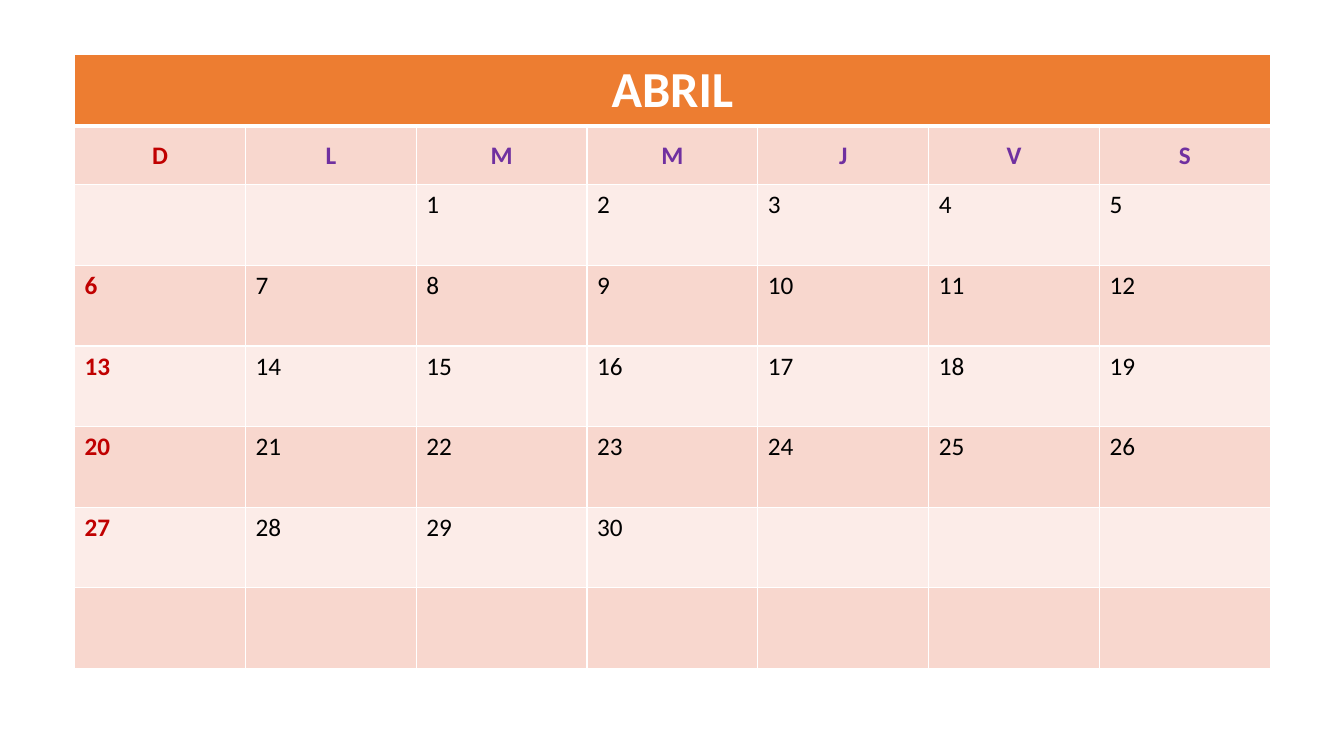
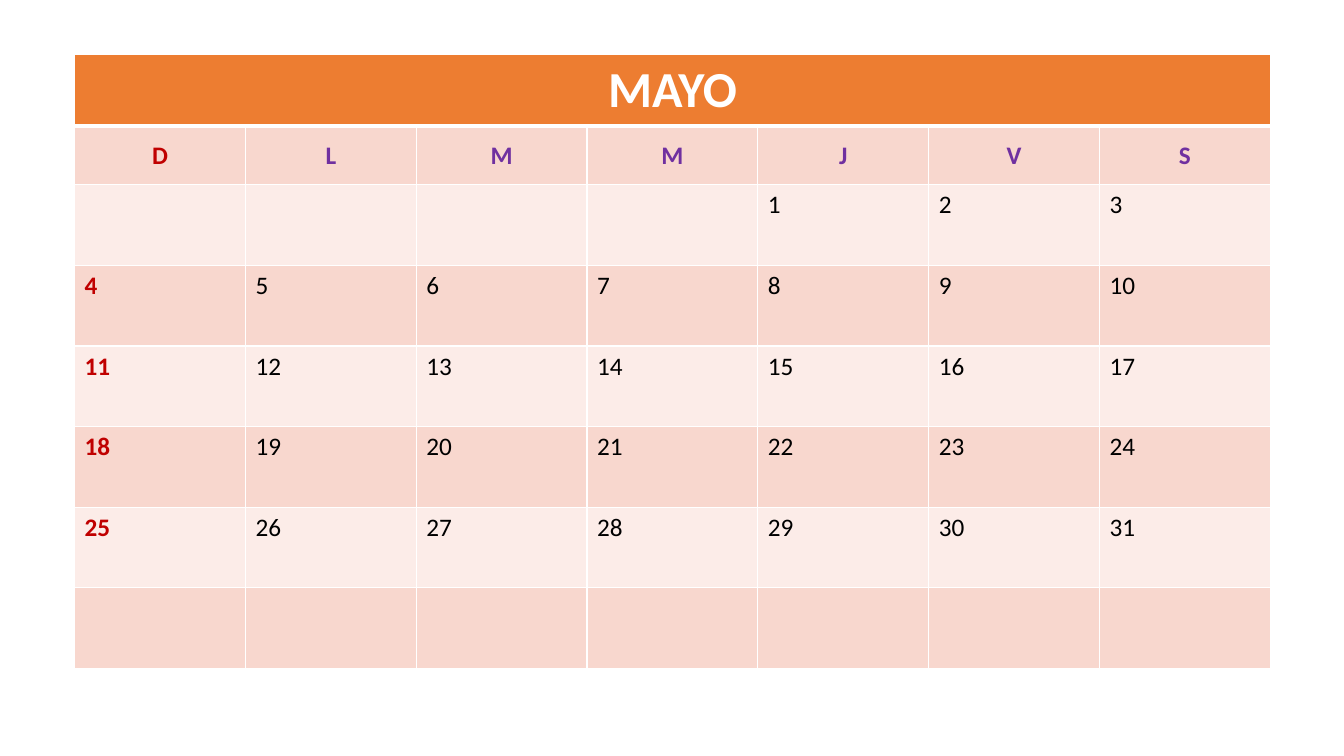
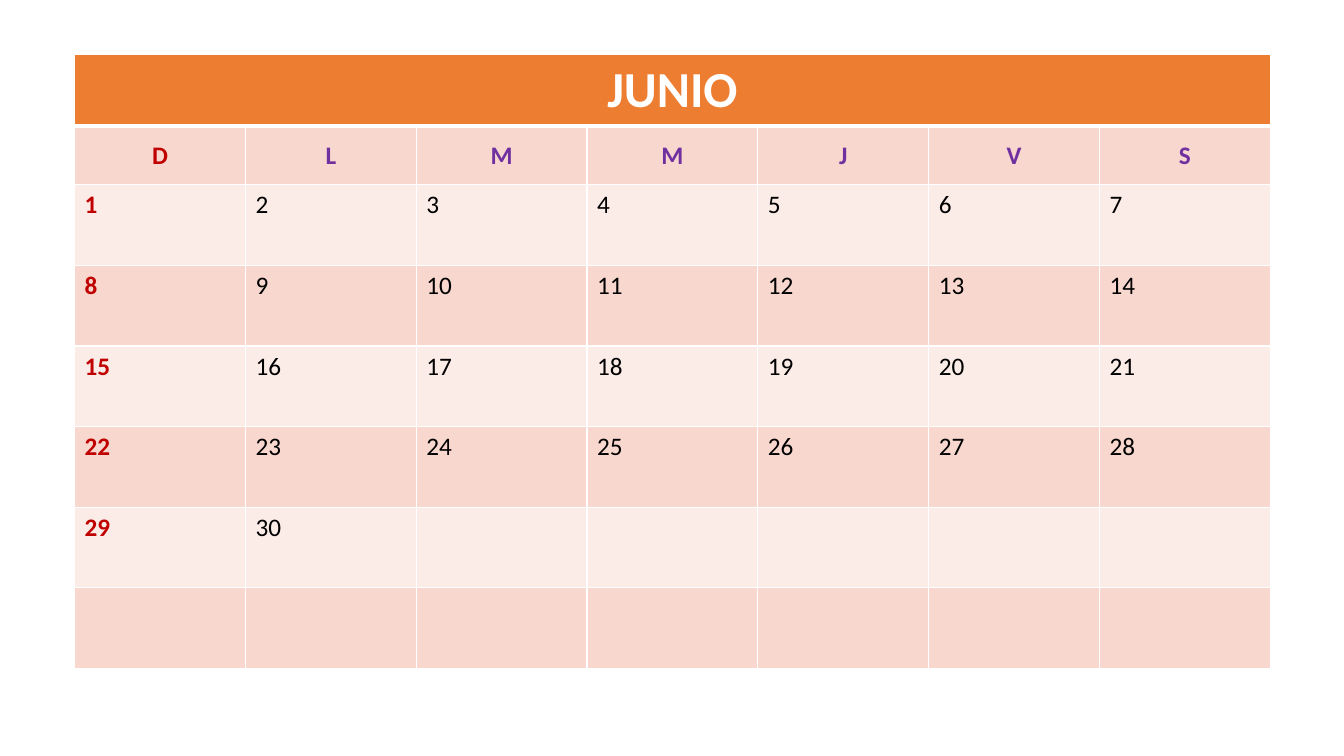
from lxml import etree
from pptx import Presentation
from pptx.dml.color import RGBColor
from pptx.enum.text import MSO_ANCHOR, PP_ALIGN
from pptx.oxml.ns import qn
from pptx.util import Inches, Pt

CENTER, LEFT = PP_ALIGN.CENTER, PP_ALIGN.LEFT
MIDDLE, TOP = MSO_ANCHOR.MIDDLE, MSO_ANCHOR.TOP

WHITE = RGBColor(0xFF, 0xFF, 0xFF)
BLACK = RGBColor(0x00, 0x00, 0x00)
ORANGE = RGBColor(0xED, 0x7D, 0x31)
PEACH = RGBColor(0xF8, 0xD7, 0xCE)
PALE_PEACH = RGBColor(0xFC, 0xEC, 0xE8)
SUNDAY_RED = RGBColor(0xC0, 0x00, 0x00)
WEEKDAY_PURPLE = RGBColor(0x70, 0x30, 0xA0)

FONT = "Calibri"
SLIDE_W, SLIDE_H = 13.33, 7.5
CALENDAR_LEFT, CALENDAR_TOP, CALENDAR_W = 0.74, 0.54, 11.86
WEEKS = 6
ROW_HEIGHTS = [0.69, 0.58] + [0.8] * WEEKS
WEEKDAYS = "DLMMJVS"
THIN, THICK = 1, 3
MONTHS = [("ABRIL", 2, 30), ("MAYO", 4, 31), ("JUNIO", 0, 30)]


def add_borders(cell, top, bottom):
    """Draw white borders of the given top and bottom widths round a cell."""
    properties = cell._tc.get_or_add_tcPr()
    for side, width in (("L", THIN), ("R", THIN), ("T", top), ("B", bottom)):
        border = etree.SubElement(properties, qn(f"a:ln{side}"), w=str(Pt(width)))
        fill = etree.SubElement(border, qn("a:solidFill"))
        etree.SubElement(fill, qn("a:srgbClr"), val=str(WHITE))


def style_cell(cell, background, top=THIN, bottom=THIN):
    """Give a cell its borders and background."""
    add_borders(cell, top, bottom)
    cell.fill.solid()
    cell.fill.fore_color.rgb = background


def write_cell(cell, text, color, size=18, bold=True, align=CENTER, anchor=MIDDLE):
    """Write formatted text into a cell."""
    cell.text = text
    cell.vertical_anchor = anchor
    paragraph = cell.text_frame.paragraphs[0]
    paragraph.alignment = align
    font = paragraph.font
    font.name, font.size, font.bold = FONT, Pt(size), bold
    font.color.rgb = color


def add_calendar(slide, month, first_weekday, day_count):
    """Add one month as a table with its weekdays and numbered days."""
    columns = len(WEEKDAYS)
    calendar = slide.shapes.add_table(
        len(ROW_HEIGHTS), columns, Inches(CALENDAR_LEFT), Inches(CALENDAR_TOP),
        Inches(CALENDAR_W), Inches(sum(ROW_HEIGHTS))).table
    for row, height in zip(calendar.rows, ROW_HEIGHTS):
        row.height = Inches(height)

    month_cell = calendar.cell(0, 0)
    month_cell.merge(calendar.cell(0, columns - 1))
    for column, weekday in enumerate(WEEKDAYS):
        is_sunday = column == 0
        style_cell(calendar.cell(0, column), ORANGE, bottom=THICK)
        weekday_cell = calendar.cell(1, column)
        style_cell(weekday_cell, PEACH, top=THICK)
        write_cell(weekday_cell, weekday, SUNDAY_RED if is_sunday else WEEKDAY_PURPLE)
        for week in range(WEEKS):
            day_cell = calendar.cell(week + 2, column)
            style_cell(day_cell, PEACH if week % 2 else PALE_PEACH)
            day = week * columns + column - first_weekday + 1
            if 1 <= day <= day_count:
                write_cell(day_cell, str(day), SUNDAY_RED if is_sunday else BLACK,
                           bold=is_sunday, align=LEFT, anchor=TOP)
    write_cell(month_cell, month, WHITE, size=36)


def main():
    """Build one calendar slide per month."""
    presentation = Presentation()
    presentation.slide_width = Inches(SLIDE_W)
    presentation.slide_height = Inches(SLIDE_H)
    blank_layout = presentation.slide_layouts[6]
    for month, first_weekday, day_count in MONTHS:
        slide = presentation.slides.add_slide(blank_layout)
        add_calendar(slide, month, first_weekday, day_count)
    presentation.save("out.pptx")


if __name__ == "__main__":
    main()
